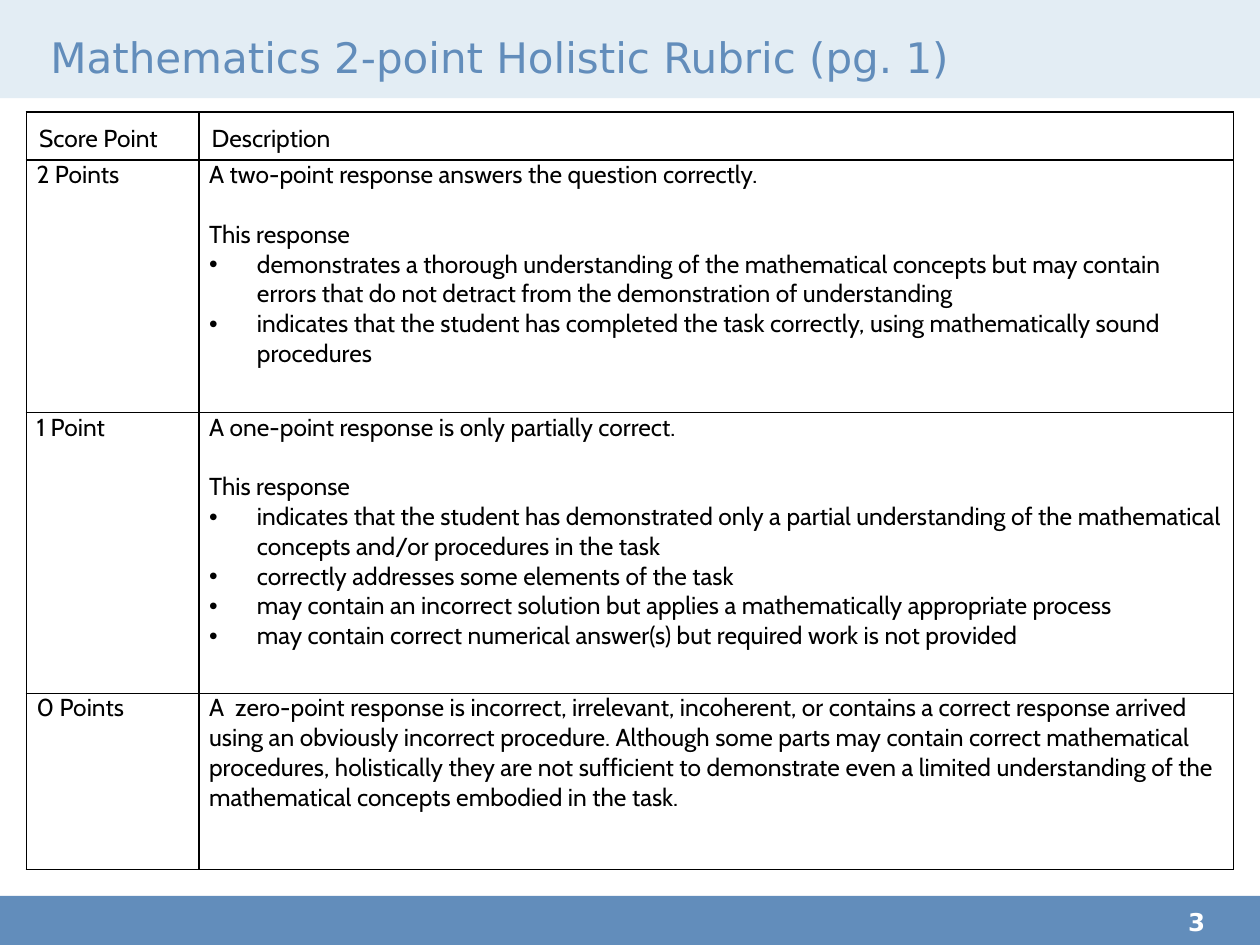
from lxml.etree import SubElement
from pptx import Presentation
from pptx.dml.color import RGBColor
from pptx.enum.shapes import MSO_SHAPE
from pptx.enum.text import MSO_ANCHOR, MSO_AUTO_SIZE, PP_ALIGN
from pptx.oxml.ns import qn
from pptx.util import Inches, Pt

WIDTH, HEIGHT = Inches(10), Inches(7.5)
BLUE, PALE, WHITE, BLACK = "628DBB", "E3EDF4", "FFFFFF", "000000"
TITLE_FONT, BODY_FONT = "DejaVu Sans", "Cabin"

COLUMN_SHARES = (14.3, 85.7)
ROW_SHARES = (6.33, 33.33, 37.09, 23.25)
HEADINGS = ("Score Point", "Description")
# Score, opening statement, traits listed under "This response"
RUBRIC = (
    ("2 Points", "A two-point response answers the question correctly.", (
        "demonstrates a thorough understanding of the mathematical concepts but may contain "
        "errors that do not detract from the demonstration of understanding",
        "indicates that the student has completed the task correctly, using mathematically "
        "sound procedures")),
    ("1 Point", "A one-point response is only partially correct.", (
        "indicates that the student has demonstrated only a partial understanding of the "
        "mathematical concepts and/or procedures in the task",
        "correctly addresses some elements of the task",
        "may contain an incorrect solution but applies a mathematically appropriate process",
        "may contain correct numerical answer(s) but required work is not provided")),
    ("0 Points", "A  zero-point response is incorrect, irrelevant, incoherent, or contains a "
     "correct response arrived using an obviously incorrect procedure. Although some parts may "
     "contain correct mathematical procedures, holistically they are not sufficient to "
     "demonstrate even a limited understanding of the mathematical concepts embodied in the "
     "task.", ()),
)


def rgb(color):
    return RGBColor.from_string(color)


def box(left, top, width, height):
    """Turn percentages of the slide into left, top, width and height."""
    return (int(WIDTH * left / 100), int(HEIGHT * top / 100),
            int(WIDTH * width / 100), int(HEIGHT * height / 100))


def set_font(paragraph, name, size, color, bold=False):
    font = paragraph.font
    font.name, font.size, font.bold = name, Pt(size), bold
    font.color.rgb = rgb(color)


def set_margins(holder, left, top, right, bottom):
    holder.margin_left, holder.margin_top = Inches(left), Inches(top)
    holder.margin_right, holder.margin_bottom = Inches(right), Inches(bottom)


def add_band(slide, area, color):
    band = slide.shapes.add_shape(MSO_SHAPE.RECTANGLE, *area)
    band.shadow.inherit = False
    band.fill.solid()
    band.fill.fore_color.rgb = rgb(color)
    band.line.fill.background()


def add_header(slide, band_area, title_area, text):
    add_band(slide, band_area, PALE)
    title = slide.shapes.title
    title.element.getparent().append(title.element)  # bring in front of the band
    title.left, title.top, title.width, title.height = title_area
    frame = title.text_frame
    frame.text = text
    frame.auto_size = MSO_AUTO_SIZE.NONE
    frame.vertical_anchor = MSO_ANCHOR.MIDDLE
    set_margins(frame, 0, 0, 0.1, 0.05)
    heading = frame.paragraphs[0]
    heading.alignment = PP_ALIGN.LEFT
    set_font(heading, TITLE_FONT, 24, BLUE)


def add_footer(slide, band_area, number_area, number):
    add_band(slide, band_area, BLUE)
    frame = slide.shapes.add_textbox(*number_area).text_frame
    frame.word_wrap = True
    set_margins(frame, 0, 0, 0, 0)
    frame.text = number
    set_font(frame.paragraphs[0], TITLE_FONT, 14, WHITE, bold=True)


def add_bullet(paragraph):
    properties = paragraph._p.get_or_add_pPr()
    indent = Inches(0.38)
    properties.set("marL", str(indent))
    properties.set("indent", str(-indent))
    SubElement(properties, qn("a:buFont"), typeface="Arial")
    SubElement(properties, qn("a:buChar"), char="•")


def add_borders(cell):
    properties = cell._tc.get_or_add_tcPr()
    for index, side in enumerate(("lnL", "lnR", "lnT", "lnB")):
        line = properties.makeelement(qn(f"a:{side}"), {"w": str(Pt(1))})
        SubElement(SubElement(line, qn("a:solidFill")), qn("a:srgbClr"), val=BLACK)
        properties.insert(index, line)


def fill_cell(cell, statement, traits=(), heading=False):
    """Write a statement and, if there are traits, a bulleted list of them."""
    cell.fill.background()
    add_borders(cell)
    if heading:
        cell.vertical_anchor = MSO_ANCHOR.BOTTOM
        set_margins(cell, 0.1, 0.05, 0.1, 0.05)
    else:
        cell.vertical_anchor = MSO_ANCHOR.TOP
        set_margins(cell, 0.08, 0, 0.08, 0)
    frame = cell.text_frame
    frame.text = statement
    if traits:
        lead_in = frame.add_paragraph()
        lead_in.text = "This response"
        lead_in.space_before = Pt(17)
    for trait in traits:
        paragraph = frame.add_paragraph()
        paragraph.text = trait
        add_bullet(paragraph)
    for paragraph in frame.paragraphs:
        set_font(paragraph, BODY_FONT, 14, BLACK)


def add_rubric(slide, area):
    width, height = area[2:]
    table = slide.shapes.add_table(len(ROW_SHARES), len(COLUMN_SHARES), *area).table
    table.first_row = table.horz_banding = False
    for column, share in zip(table.columns, COLUMN_SHARES):
        column.width = int(width * share / 100)
    for row, share in zip(table.rows, ROW_SHARES):
        row.height = int(height * share / 100)
    for column, heading in enumerate(HEADINGS):
        fill_cell(table.cell(0, column), heading, heading=True)
    for row, (score, statement, traits) in enumerate(RUBRIC, start=1):
        fill_cell(table.cell(row, 0), score)
        fill_cell(table.cell(row, 1), statement, traits)


def main():
    presentation = Presentation()
    presentation.slide_width, presentation.slide_height = WIDTH, HEIGHT
    slide = presentation.slides.add_slide(presentation.slide_layouts[5])
    add_header(slide, box(0, 0, 100, 10.4), box(4, 3.07, 90, 6.53),
               "Mathematics 2-point Holistic Rubric (pg. 1)")
    add_rubric(slide, box(2.1, 11.87, 95.8, 80.13))
    add_footer(slide, box(0, 94.8, 100, 5.2), box(94.3, 96, 5.7, 4), "3")
    presentation.save("out.pptx")


if __name__ == "__main__":
    main()
